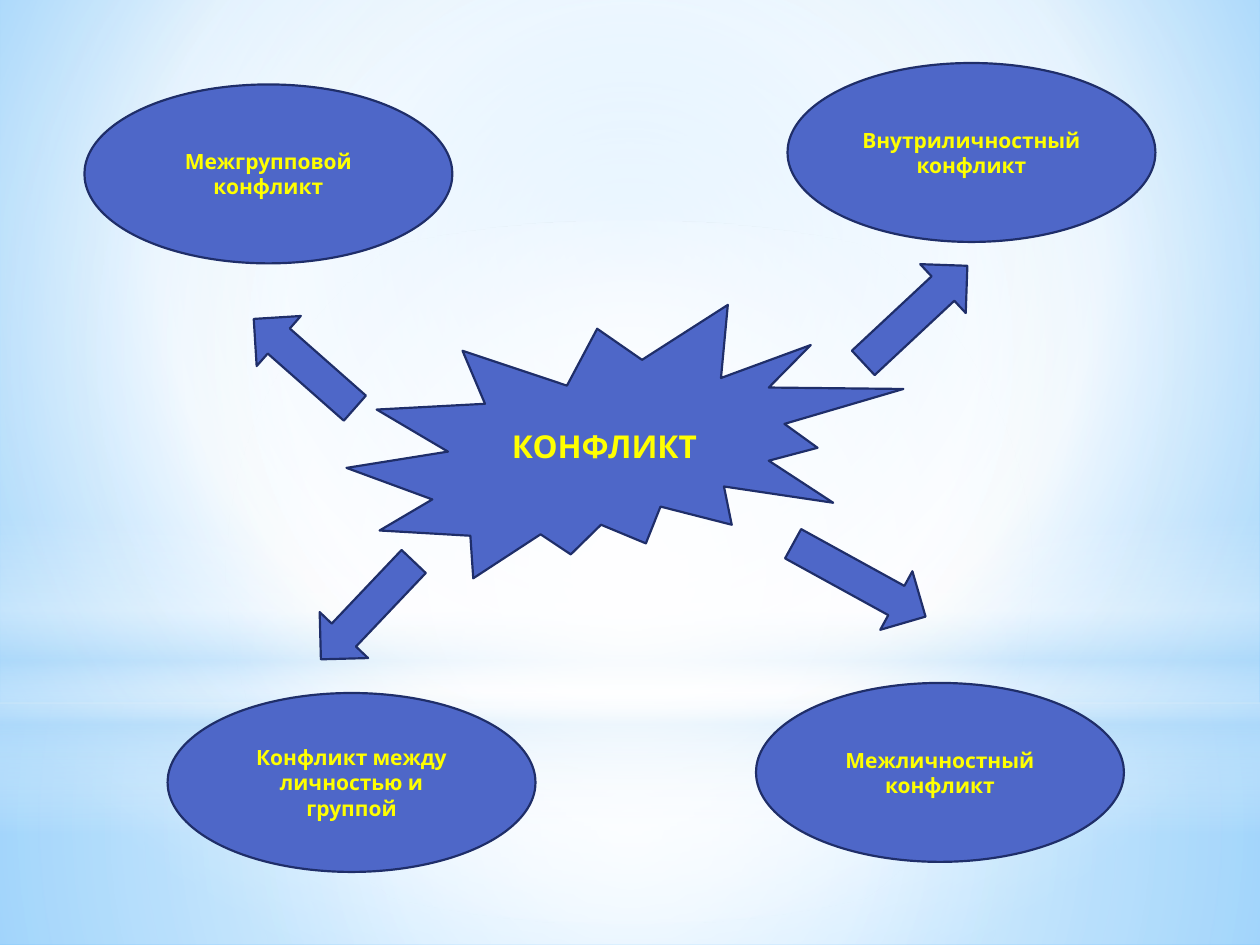
from lxml import etree
from pptx import Presentation, util as u
from pptx.dml.color import RGBColor
from pptx.enum import shapes, text
from pptx.oxml.ns import nsdecls

COLORS = {
    "fill": "4E67C8",
    "outline": "1F2E69",
    "text": "FFFF00",
    "white": "FFFFFF",
    "mist": "B4DCFA",
    "sky": "9ED5FF",
    "deep": "5BB9FF",
}
FONT = "Karla"
PRESET = shapes.MSO_SHAPE
CENTRE = (50, 50, 50, 50)

GLOWS = [
    (PRESET.RECTANGLE, (0, 5.58, 10, 1.92),
     [(0, "white", 91), (37, "white", 76), (100, "mist", 79)], CENTRE),
    (PRESET.RECTANGLE, (0, 0, 10, 5.58),
     [(0, "white", 89), (48, "white", 62), (100, "mist", 79)], CENTRE),
    (PRESET.RECTANGLE, (0, 4.12, 10, 2.5),
     [(0, "white", 0), (29, "white", 30), (45, "mist", 40),
      (55, "white", 26), (65, "mist", 60), (100, "white", 0)], None),
    (PRESET.OVAL, (0, 1.75, 10, 5.58),
     [(0, "white", 100), (56, "white", 0)], CENTRE),
]
CONFLICT_TYPES = [
    ("Внутриличностный конфликт", 6.25, 0.5),
    ("Межгрупповой конфликт", 0.67, 0.67),
    ("Межличностный конфликт", 6, 5.42),
    ("Конфликт между личностью и группой", 1.33, 5.5),
]
ARROWS = [
    (PRESET.RIGHT_ARROW, (6.22, 4.34, 1.2, 0.53), 28.8),
    (PRESET.RIGHT_ARROW, (6.7, 2.23, 1.13, 0.53), 317),
    (PRESET.DOWN_ARROW, (2.65, 4.31, 0.53, 1.07), 43.5),
    (PRESET.UP_ARROW, (2.15, 2.35, 0.53, 1.07), 311.4),
]


def rgb(name):
    return RGBColor.from_string(COLORS[name])


def set_gradient(fill, owner, stops, focus):
    fill.solid()
    fill.fore_color.rgb = rgb("white")
    solid = owner.xpath(".//a:solidFill")[0]
    marks = "".join(
        f'<a:gs pos="{place * 1000}"><a:srgbClr val="{COLORS[name]}">'
        f'<a:alpha val="{opacity * 1000}"/></a:srgbClr></a:gs>'
        for place, name, opacity in stops)
    if focus:
        sides = " ".join(f'{side}="{share * 1000}"' for side, share in zip("ltrb", focus))
        direction = f'<a:path path="circle"><a:fillToRect {sides}/></a:path>'
    else:
        direction = '<a:lin ang="5400000" scaled="0"/>'
    gradient = etree.fromstring(
        f'<a:gradFill {nsdecls("a")} rotWithShape="1">'
        f"<a:gsLst>{marks}</a:gsLst>{direction}</a:gradFill>")
    solid.getparent().replace(solid, gradient)


def add_preset(page, preset, place):
    shape = page.shapes.add_shape(preset, *map(u.Inches, place))
    shape.shadow.inherit = False
    return shape


def add_glow(page, preset, place, stops, focus):
    glow = add_preset(page, preset, place)
    set_gradient(glow.fill, glow.element, stops, focus)
    glow.line.fill.background()


def add_figure(page, preset, place):
    figure = add_preset(page, preset, place)
    figure.fill.solid()
    figure.fill.fore_color.rgb = rgb("fill")
    figure.line.color.rgb = rgb("outline")
    figure.line.width = u.Pt(1.25)
    return figure


def add_label(page, preset, place, words, size):
    frame = add_figure(page, preset, place).text_frame
    frame.text = words
    frame.word_wrap = True
    frame.vertical_anchor = text.MSO_ANCHOR.MIDDLE
    para = frame.paragraphs[0]
    para.alignment = text.PP_ALIGN.CENTER
    font = para.runs[0].font
    font.name = FONT
    font.size = u.Pt(size)
    font.bold = True
    font.color.rgb = rgb("text")


def add_arrow(page, preset, place, angle):
    add_figure(page, preset, place).rotation = angle


def main():
    deck = Presentation()
    deck.slide_width, deck.slide_height = u.Inches(10), u.Inches(7.5)
    page = deck.slides.add_slide(deck.slide_layouts[6])
    set_gradient(page.background.fill, page.element,
                 [(0, "sky", 100), (60, "white", 100), (100, "deep", 100)],
                 (20, 10, 20, 60))
    for glow in GLOWS:
        add_glow(page, *glow)
    add_label(page, PRESET.EXPLOSION2, (2.75, 2.42, 4.42, 2.17), "КОНФЛИКТ", 18)
    for words, left, top in CONFLICT_TYPES:
        add_label(page, PRESET.OVAL, (left, top, 2.92, 1.42), words, 12)
    for arrow in ARROWS:
        add_arrow(page, *arrow)
    deck.save("out.pptx")


if __name__ == "__main__":
    main()
